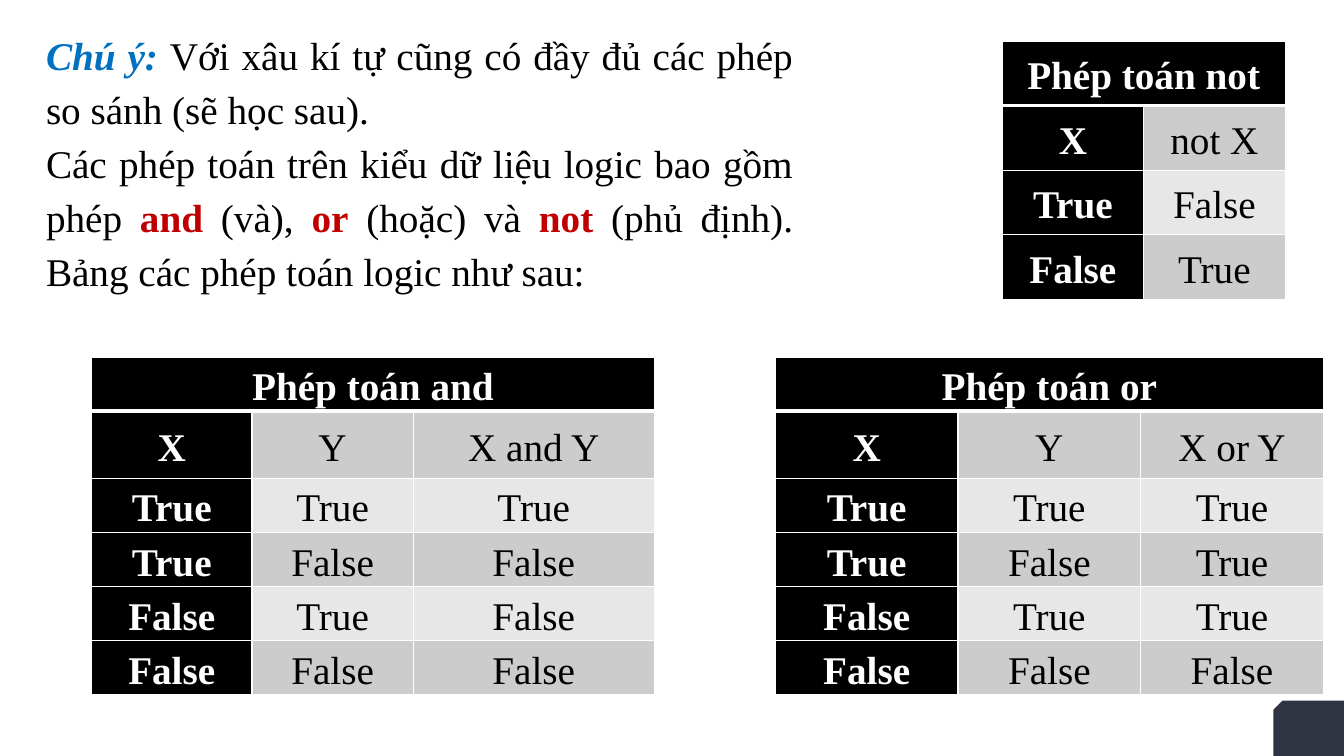
from itertools import product

from lxml import etree
from pptx import Presentation
from pptx.dml.color import RGBColor
from pptx.enum.shapes import MSO_SHAPE
from pptx.enum.text import MSO_ANCHOR, MSO_AUTO_SIZE, PP_ALIGN
from pptx.oxml.ns import qn
from pptx.util import Inches, Pt

SNIP = MSO_SHAPE.SNIP_1_RECTANGLE
MIDDLE = MSO_ANCHOR.MIDDLE
GROW = MSO_AUTO_SIZE.SHAPE_TO_FIT_TEXT
CENTER, JUSTIFY = PP_ALIGN.CENTER, PP_ALIGN.JUSTIFY

BLACK = RGBColor(0x00, 0x00, 0x00)
WHITE = RGBColor(0xFF, 0xFF, 0xFF)
BLUE = RGBColor(0x00, 0x70, 0xC0)
RED = RGBColor(0xC0, 0x00, 0x00)
NAVY = RGBColor(0x2F, 0x33, 0x42)
DARK = RGBColor(0xCC, 0xCC, 0xCC)
LIGHT = RGBColor(0xE7, 0xE7, 0xE7)

COLS, ROWS = 160, 90


class Page:
    """Draws on one slide; lengths are cells of a 160 by 90 grid."""

    font = "Times New Roman"
    size = Pt(28)
    lead = 1.15

    def __init__(self, deck):
        self.slide = deck.slides.add_slide(deck.slide_layouts[6])
        self.wide = deck.slide_width
        self.high = deck.slide_height

    def across(self, cols):
        return round(self.wide * cols / COLS)

    def down(self, rows):
        return round(self.high * rows / ROWS)

    def area(self, left, top, width, height):
        return (self.across(left), self.down(top),
                self.across(width), self.down(height))

    def style(self, run, color, bold=False, italic=False):
        font = run.font
        font.name, font.size = self.font, self.size
        font.bold, font.italic = bold, italic
        font.color.rgb = color

    def corner(self, *box):
        shape = self.slide.shapes.add_shape(SNIP, *self.area(*box))
        shape.shadow.inherit = False
        shape.fill.solid()
        shape.fill.fore_color.rgb = NAVY
        shape.line.fill.background()
        shape._element.spPr.find(qn("a:xfrm")).set("flipH", "1")

    def note(self, paras, *box):
        """Writes paragraphs, each a list of (text, style arguments)."""
        frame = self.slide.shapes.add_textbox(*self.area(*box)).text_frame
        frame.word_wrap = True
        frame.auto_size = GROW
        for i, parts in enumerate(paras):
            para = frame.add_paragraph() if i else frame.paragraphs[0]
            para.alignment, para.line_spacing = JUSTIFY, self.lead
            for text, look in parts:
                run = para.add_run()
                run.text = text
                self.style(run, *look)

    def border(self, cell, row):
        """Adds white edges, thick between the title row and the next."""
        props = cell._tc.get_or_add_tcPr()
        thick = {(0, "B"), (1, "T")}
        for side in "LRTB":
            width = Pt(3 if (row, side) in thick else 1)
            line = etree.SubElement(props, qn(f"a:ln{side}"), w=str(width))
            fill = etree.SubElement(line, qn("a:solidFill"))
            etree.SubElement(fill, qn("a:srgbClr"), val=str(WHITE))

    def cell(self, cell, text, row, col):
        head = row == 0 or col == 0
        self.border(cell, row)
        cell.fill.solid()
        cell.fill.fore_color.rgb = BLACK if head else DARK if row % 2 else LIGHT
        cell.vertical_anchor = MIDDLE
        cell.margin_left = cell.margin_right = Inches(0.07)
        cell.margin_top = cell.margin_bottom = 0
        para = cell.text_frame.paragraphs[0]
        para.alignment, para.line_spacing = CENTER, self.lead
        if text:
            para.text = text
            self.style(para.runs[0], WHITE if head else BLACK, head)

    def table(self, title, body, left, top, cols, rows):
        """Draws a truth table under a title that spans all columns."""
        box = self.area(left, top, sum(cols), sum(rows))
        grid = self.slide.shapes.add_table(len(rows), len(cols), *box).table
        for col, width in zip(grid.columns, cols):
            col.width = self.across(width)
        for row, height in zip(grid.rows, rows):
            row.height = self.down(height)
        grid.cell(0, 0).merge(grid.cell(0, len(cols) - 1))
        lines = [[title] + [""] * (len(cols) - 1)] + body
        for r, line in enumerate(lines):
            for c, value in enumerate(line):
                self.cell(grid.cell(r, c), str(value), r, c)


def main():
    deck = Presentation()
    deck.slide_width, deck.slide_height = Inches(13.33), Inches(7.5)
    page = Page(deck)
    plain, key = (BLACK,), (RED, True)

    page.corner(151.6, 83.4, 8.4, 6.6)
    page.note([
        [("Chú ý: ", (BLUE, True, True)),
         ("Với xâu kí tự cũng có đầy đủ các phép so sánh (sẽ học sau).", plain)],
        [("Các phép toán trên kiểu dữ liệu logic bao gồm phép ", plain),
         ("and", key), (" (và), ", plain),
         ("or", key), (" (hoặc) và ", plain),
         ("not", key),
         (" (phủ định). Bảng các phép toán logic như sau:", plain)],
    ], 4.3, 2.3, 91.3, 33.7)

    bools = (True, False)
    pairs = list(product(bools, repeat=2))
    tall = [6.4, 8] + [6.45] * 4
    both = [["X", "Y", "X and Y"]] + [[x, y, x and y] for x, y in pairs]
    either = [["X", "Y", "X or Y"]] + [[x, y, x or y] for x, y in pairs]
    negate = [["X", "not X"]] + [[x, not x] for x in bools]
    page.table("Phép toán and", both, 10.9, 42.5, [19.1, 19.2, 28.7], tall)
    page.table("Phép toán or", either, 92.3, 42.5, [21.75] * 3, tall)
    page.table("Phép toán not", negate, 119.3, 4.9, [16.85] * 2, [7.68] * 4)

    deck.save("out.pptx")


if __name__ == "__main__":
    main()
